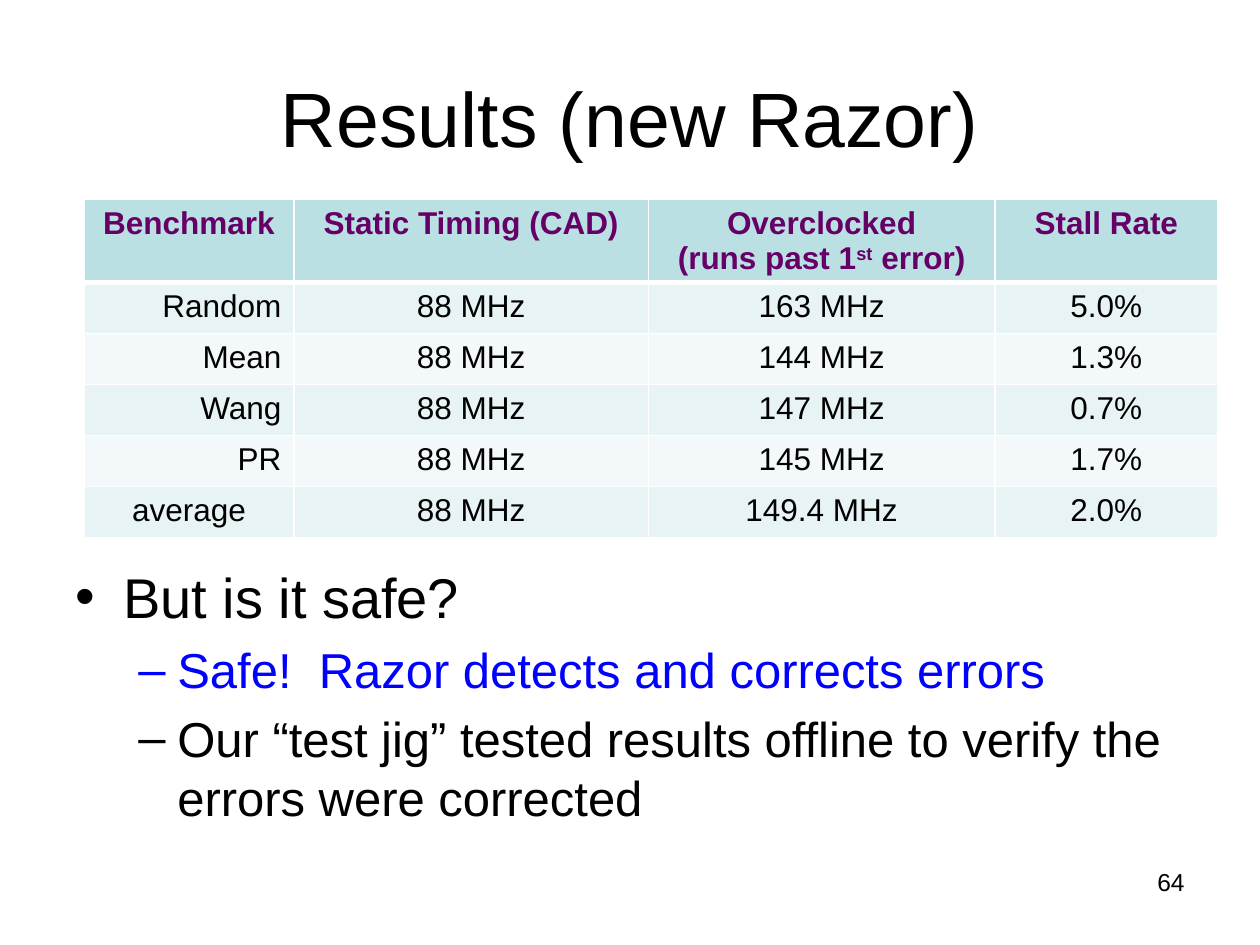
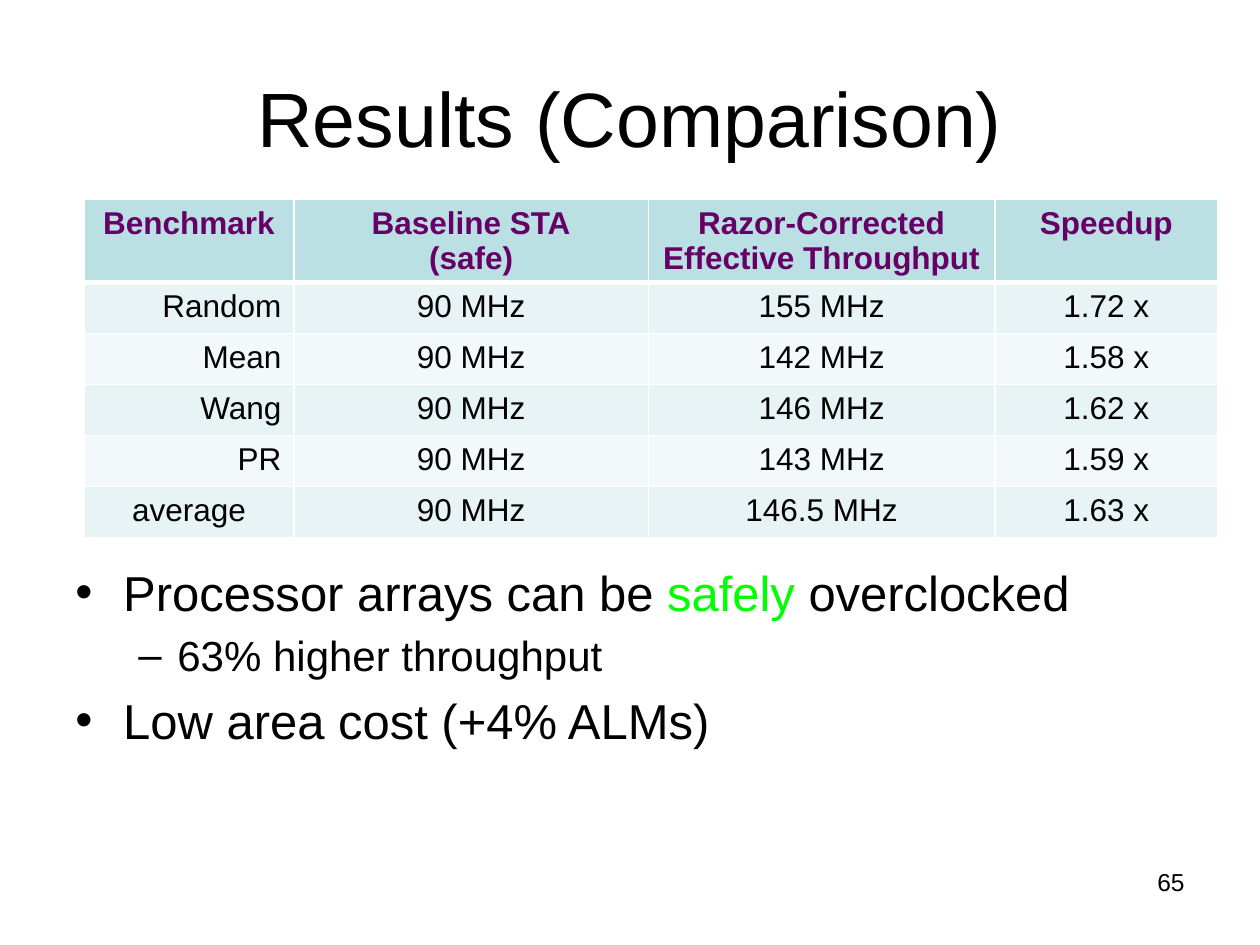
"""Build two slides of benchmark results, each with a table and bullets."""
from dataclasses import dataclass
from typing import NamedTuple

from lxml import etree
from pptx import Presentation
from pptx.dml.color import RGBColor
from pptx.enum.text import MSO_ANCHOR, MSO_AUTO_SIZE, PP_ALIGN
from pptx.oxml.ns import qn
from pptx.util import Inches, Pt

LEFT, CENTER, RIGHT = PP_ALIGN.LEFT, PP_ALIGN.CENTER, PP_ALIGN.RIGHT
MIDDLE, TOP = MSO_ANCHOR.MIDDLE, MSO_ANCHOR.TOP
NO_FIT = MSO_AUTO_SIZE.NONE
TITLE_ONLY = 5
SLIDE_W, SLIDE_H = Inches(10), Inches(7.5)
GRID_COLS, GRID_ROWS = 120, 90


@dataclass(frozen=True)
class Theme:
    """Colours and type sizes shared by all slides."""
    font: str = "Arial"
    text: str = "000000"
    header_text: str = "660066"
    blue: str = "0000FF"
    green: str = "00FF00"
    header_fill: str = "BBE0E3"
    bands: tuple[str, str] = ("E7F3F4", "F3F9FA")
    border: str = "FFFFFF"
    thin: float = 1
    thick: float = 3
    title_size: int = 44
    table_size: int = 18
    number_size: int = 14


class Box(NamedTuple):
    """Left, top, width and height in grid columns and rows."""
    left: float
    top: float
    width: float
    height: float


class Span(NamedTuple):
    """Stretch of text with one look."""
    text: str
    color: str = "000000"
    bold: bool = False
    raised: bool = False


class BulletStyle(NamedTuple):
    """Mark, left margin and hanging indent in inches."""
    mark: str
    margin: float
    hang: float


class Bullet(NamedTuple):
    """Bulleted paragraph."""
    level: int
    size: int
    spans: tuple[Span, ...]


@dataclass(frozen=True)
class ResultSlide:
    """Content of one results slide."""
    number: int
    title: str
    headers: tuple[tuple[Span, ...], ...]
    rows: tuple[tuple[str, ...], ...]
    bullets: tuple[Bullet, ...]


THEME = Theme()
TITLE_BOX = Box(6, 3.6, 108, 15)
TABLE_BOX = Box(8, 19, 108, 32.8)
BODY_BOX = Box(6, 53, 108, 27.4)
NUMBER_BOX = Box(86, 82, 28, 6.25)
TABLE_COLS = (20, 33.75, 33, 21.25)
TABLE_ROW = 4.86
BULLET_STYLES = (BulletStyle("•", 0.38, 0.38), BulletStyle("–", 0.81, 0.31))
BULLET_GAP = 0.2


def across(cols: float) -> int:
    """Convert grid columns to a length."""
    return round(SLIDE_W * cols / GRID_COLS)


def down(rows: float) -> int:
    """Convert grid rows to a length."""
    return round(SLIDE_H * rows / GRID_ROWS)


def place(box: Box) -> tuple[int, int, int, int]:
    """Convert a grid box to lengths."""
    return across(box.left), down(box.top), across(box.width), down(box.height)


def write(p, spans: tuple[Span, ...], size: int, align=LEFT) -> None:
    """Fill a paragraph with formatted spans, breaking at newlines."""
    p.alignment = align
    for span in spans:
        for i, line in enumerate(span.text.split("\n")):
            if i:
                p.add_line_break()
            r = p.add_run()
            r.text = line
            r.font.name, r.font.size, r.font.bold = THEME.font, Pt(size), span.bold
            r.font.color.rgb = RGBColor.from_string(span.color)
            if span.raised:
                r.font._element.set("baseline", "30000")


def header(text: str) -> Span:
    """Make a table header span."""
    return Span(text, THEME.header_text, True)


def add_title(s, title: str) -> None:
    """Place and fill the title placeholder."""
    sp = s.shapes.title
    sp.left, sp.top, sp.width, sp.height = place(TITLE_BOX)
    tf = sp.text_frame
    tf.vertical_anchor, tf.word_wrap, tf.auto_size = MIDDLE, True, NO_FIT
    write(tf.paragraphs[0], (Span(title),), THEME.title_size, CENTER)


def add_text(s, box: Box):
    """Add a wrapping text box and return its text frame."""
    tf = s.shapes.add_textbox(*place(box)).text_frame
    tf.word_wrap, tf.auto_size, tf.vertical_anchor = True, NO_FIT, TOP
    return tf


def set_borders(cell, top: float, bottom: float) -> None:
    """Draw the four borders of a cell."""
    tc_pr = cell._tc.get_or_add_tcPr()
    widths = {"L": THEME.thin, "R": THEME.thin, "T": top, "B": bottom}
    for side, width in widths.items():
        ln = etree.SubElement(tc_pr, qn(f"a:ln{side}"), w=str(Pt(width)))
        fill = etree.SubElement(ln, qn("a:solidFill"))
        etree.SubElement(fill, qn("a:srgbClr"), val=THEME.border)


def add_results(s, content: ResultSlide) -> None:
    """Add the banded table of results."""
    body = [tuple((Span(text),) for text in row) for row in content.rows]
    grid = [content.headers, *body]
    frame = s.shapes.add_table(len(grid), len(TABLE_COLS), *place(TABLE_BOX))
    table = frame.table
    table.first_row = table.horz_banding = False
    for column, width in zip(table.columns, TABLE_COLS):
        column.width = across(width)
    for i, spans_row in enumerate(grid):
        table.rows[i].height = down(TABLE_ROW)
        fill = THEME.bands[(i - 1) % 2] if i else THEME.header_fill
        for j, spans in enumerate(spans_row):
            cell = table.cell(i, j)
            set_borders(cell, THEME.thick if i == 1 else THEME.thin,
                        THEME.thin if i else THEME.thick)
            cell.fill.solid()
            cell.fill.fore_color.rgb = RGBColor.from_string(fill)
            is_name = j == 0 and 0 < i < len(grid) - 1
            write(cell.text_frame.paragraphs[0], spans, THEME.table_size,
                  RIGHT if is_name else CENTER)
    frame.height = down(TABLE_BOX.height)


def add_bullets(s, bullets: tuple[Bullet, ...]) -> None:
    """Add the bulleted conclusions."""
    tf = add_text(s, BODY_BOX)
    for i, bullet in enumerate(bullets):
        p = tf.add_paragraph() if i else tf.paragraphs[0]
        style = BULLET_STYLES[bullet.level]
        p.level = bullet.level
        p.space_before = Pt(bullet.size * BULLET_GAP)
        write(p, bullet.spans, bullet.size)
        p_pr = p._p.get_or_add_pPr()
        p_pr.set("marL", str(Inches(style.margin)))
        p_pr.set("indent", str(-Inches(style.hang)))
        etree.SubElement(p_pr, qn("a:buFont"), typeface=THEME.font)
        etree.SubElement(p_pr, qn("a:buChar"), char=style.mark)


def add_result_slide(prs, content: ResultSlide) -> None:
    """Add one complete results slide."""
    s = prs.slides.add_slide(prs.slide_layouts[TITLE_ONLY])
    add_title(s, content.title)
    add_results(s, content)
    tf = add_text(s, NUMBER_BOX)
    write(tf.paragraphs[0], (Span(str(content.number)),), THEME.number_size, RIGHT)
    add_bullets(s, content.bullets)


SLIDES = (
    ResultSlide(
        64, "Results (new Razor)",
        ((header("Benchmark"),),
         (header("Static Timing (CAD)"),),
         (header("Overclocked\n(runs past 1"),
          Span("st", THEME.header_text, True, True), header(" error)")),
         (header("Stall Rate"),)),
        (("Random", "88 MHz", "163 MHz", "5.0%"),
         ("Mean", "88 MHz", "144 MHz", "1.3%"),
         ("Wang", "88 MHz", "147 MHz", "0.7%"),
         ("PR", "88 MHz", "145 MHz", "1.7%"),
         ("average", "88 MHz", "149.4 MHz", "2.0%")),
        (Bullet(0, 32, (Span("But is it safe?"),)),
         Bullet(1, 28, (Span("Safe!  Razor detects and corrects errors", THEME.blue),)),
         Bullet(1, 28, (Span("Our “test jig” tested results offline to verify "
                             "the errors were corrected"),))),
    ),
    ResultSlide(
        65, "Results (Comparison)",
        ((header("Benchmark"),),
         (header("Baseline STA\n(safe)"),),
         (header("Razor-Corrected Effective Throughput"),),
         (header("Speedup"),)),
        (("Random", "90 MHz", "155 MHz", "1.72 x"),
         ("Mean", "90 MHz", "142 MHz", "1.58 x"),
         ("Wang", "90 MHz", "146 MHz", "1.62 x"),
         ("PR", "90 MHz", "143 MHz", "1.59 x"),
         ("average", "90 MHz", "146.5 MHz", "1.63 x")),
        (Bullet(0, 28, (Span("Processor arrays can be "),
                        Span("safely ", THEME.green), Span("overclocked"))),
         Bullet(1, 24, (Span("63% higher throughput"),)),
         Bullet(0, 28, (Span("Low area cost (+4% ALMs)"),))),
    ),
)


def main() -> None:
    """Build and save the presentation."""
    prs = Presentation()
    prs.slide_width, prs.slide_height = SLIDE_W, SLIDE_H
    for content in SLIDES:
        add_result_slide(prs, content)
    prs.save("out.pptx")


if __name__ == "__main__":
    main()
